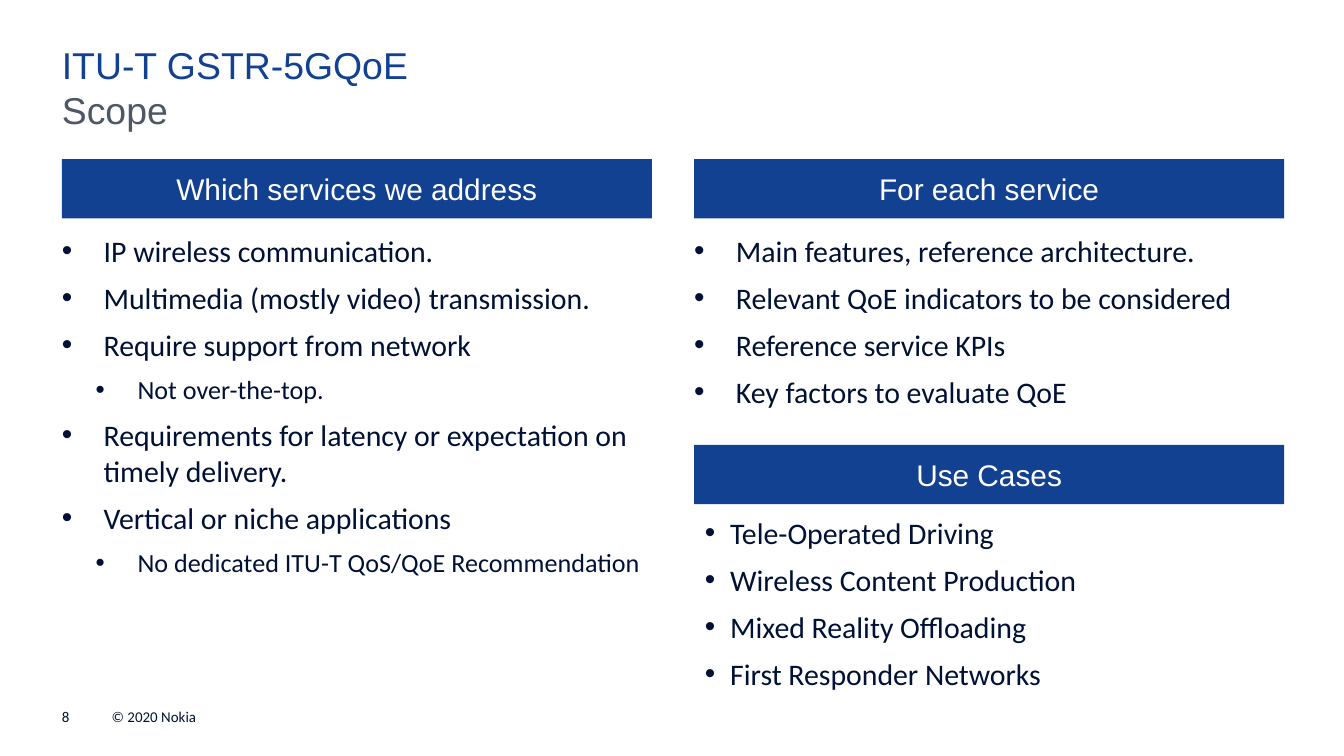
import dataclasses

import pptx
import pptx.dml.color
import pptx.enum.shapes
import pptx.enum.text
import pptx.oxml
import pptx.oxml.ns
import pptx.util

Cm = pptx.util.Cm
Pt = pptx.util.Pt
ANCHOR = pptx.enum.text.MSO_ANCHOR


@dataclasses.dataclass(frozen=True)
class Theme:
    blue: str = "124191"
    navy: str = "001135"
    grey: str = "4D5766"
    white: str = "FFFFFF"
    heading_font: str = "Arial"
    body_font: str = "Calibri"
    title_size: int = 20
    body_sizes: tuple = (16, 14)  # by bullet level
    footer_size: int = 8
    bullet_gap: int = 6


class SlideBuilder:
    def __init__(self, s, theme):
        self.s = s
        self.theme = theme

    def _frame(self, sp, inset, anchor):
        tf = sp.text_frame
        tf.word_wrap = True
        tf.vertical_anchor = anchor
        tf.margin_left = tf.margin_right = Cm(inset)
        tf.margin_top = tf.margin_bottom = Cm(inset)
        return tf

    def _run(self, p, text, font, size, color):
        r = p.add_run()
        r.text = text
        r.font.name = font
        r.font.size = Pt(size)
        r.font.color.rgb = pptx.dml.color.RGBColor.from_string(color)

    def _bullet(self, p, left, hang):
        """Give the paragraph a bullet; left and hang are in centimetres."""
        pPr = p._p.get_or_add_pPr()
        pPr.set("marL", str(Cm(left)))
        pPr.set("indent", str(-Cm(hang)))
        ns = pptx.oxml.ns.nsdecls("a")
        pPr.append(pptx.oxml.parse_xml(f'<a:buFont {ns} typeface="Arial"/>'))
        pPr.append(pptx.oxml.parse_xml(f'<a:buChar {ns} char="•"/>'))

    def text(self, box, text, font, size, color, anchor=ANCHOR.TOP):
        sp = self.s.shapes.add_textbox(*map(Cm, box))
        tf = self._frame(sp, 0, anchor)
        self._run(tf.paragraphs[0], text, font, size, color)

    def title(self, box, text, color):
        self.text(box, text, self.theme.heading_font, self.theme.title_size, color)

    def footer(self, box, text):
        t = self.theme
        self.text(box, text, t.body_font, t.footer_size, t.navy, ANCHOR.BOTTOM)

    def banner(self, box, text):
        t = self.theme
        sp = self.s.shapes.add_shape(
            pptx.enum.shapes.MSO_SHAPE.RECTANGLE, *map(Cm, box))
        sp.shadow.inherit = False
        sp.fill.solid()
        sp.fill.fore_color.rgb = pptx.dml.color.RGBColor.from_string(t.blue)
        sp.line.fill.background()
        p = self._frame(sp, 0.2, ANCHOR.MIDDLE).paragraphs[0]
        p.alignment = pptx.enum.text.PP_ALIGN.CENTER
        self._run(p, text, t.heading_font, t.body_sizes[0], t.white)

    def bullets(self, box, items, hang=0.79, step=0.64, inset=0):
        """Add a list of (level, text) items, each level indented by step."""
        t = self.theme
        sp = self.s.shapes.add_textbox(*map(Cm, box))
        tf = self._frame(sp, inset, ANCHOR.TOP)
        for i, (level, text) in enumerate(items):
            p = tf.add_paragraph() if i else tf.paragraphs[0]
            p.level = level
            p.space_after = Pt(t.bullet_gap)
            self._bullet(p, hang + level * step, hang)
            self._run(p, text, t.body_font, t.body_sizes[level], t.navy)


SERVICES = [
    (0, "IP wireless communication."),
    (0, "Multimedia (mostly video) transmission."),
    (0, "Require support from network"),
    (1, "Not over-the-top."),
    (0, "Requirements for latency or expectation on timely delivery."),
    (0, "Vertical or niche applications"),
    (1, "No dedicated ITU-T QoS/QoE Recommendation"),
]
PER_SERVICE = [
    (0, "Main features, reference architecture."),
    (0, "Relevant QoE indicators to be considered"),
    (0, "Reference service KPIs"),
    (0, "Key factors to evaluate QoE"),
]
USE_CASES = [
    (0, "Tele-Operated Driving"),
    (0, "Wireless Content Production"),
    (0, "Mixed Reality Offloading"),
    (0, "First Responder Networks"),
]


def main():
    prs = pptx.Presentation()
    prs.slide_width, prs.slide_height = Cm(25.4), Cm(14.29)
    theme = Theme()
    b = SlideBuilder(prs.slides.add_slide(prs.slide_layouts[6]), theme)

    left, col_w, gutter = 1.17, 11.15, 0.8
    right = left + col_w + gutter
    full_w = 2 * col_w + gutter
    banner_h = 1.12

    b.title((left, 0.79, full_w, 0.86), "ITU-T GSTR-5GQoE", theme.blue)
    b.title((left, 1.65, full_w, 0.86), "Scope", theme.grey)

    columns = [
        (left, "Which services we address", SERVICES),
        (right, "For each service", PER_SERVICE),
    ]
    for x, heading, items in columns:
        b.banner((x, 3.01, col_w, banner_h), heading)
        b.bullets((x, 4.4, col_w, 8), items)

    cases_top = 8.41
    b.banner((right, cases_top, col_w, banner_h), "Use Cases")
    b.bullets((right, cases_top + banner_h, col_w, 3.78), USE_CASES,
              hang=0.48, inset=0.2)

    b.footer((left, 13.39, 0.71, 0.33), "8")
    b.footer((2.11, 13.39, 5, 0.33), "© 2020 Nokia")

    prs.save("out.pptx")


if __name__ == "__main__":
    main()
